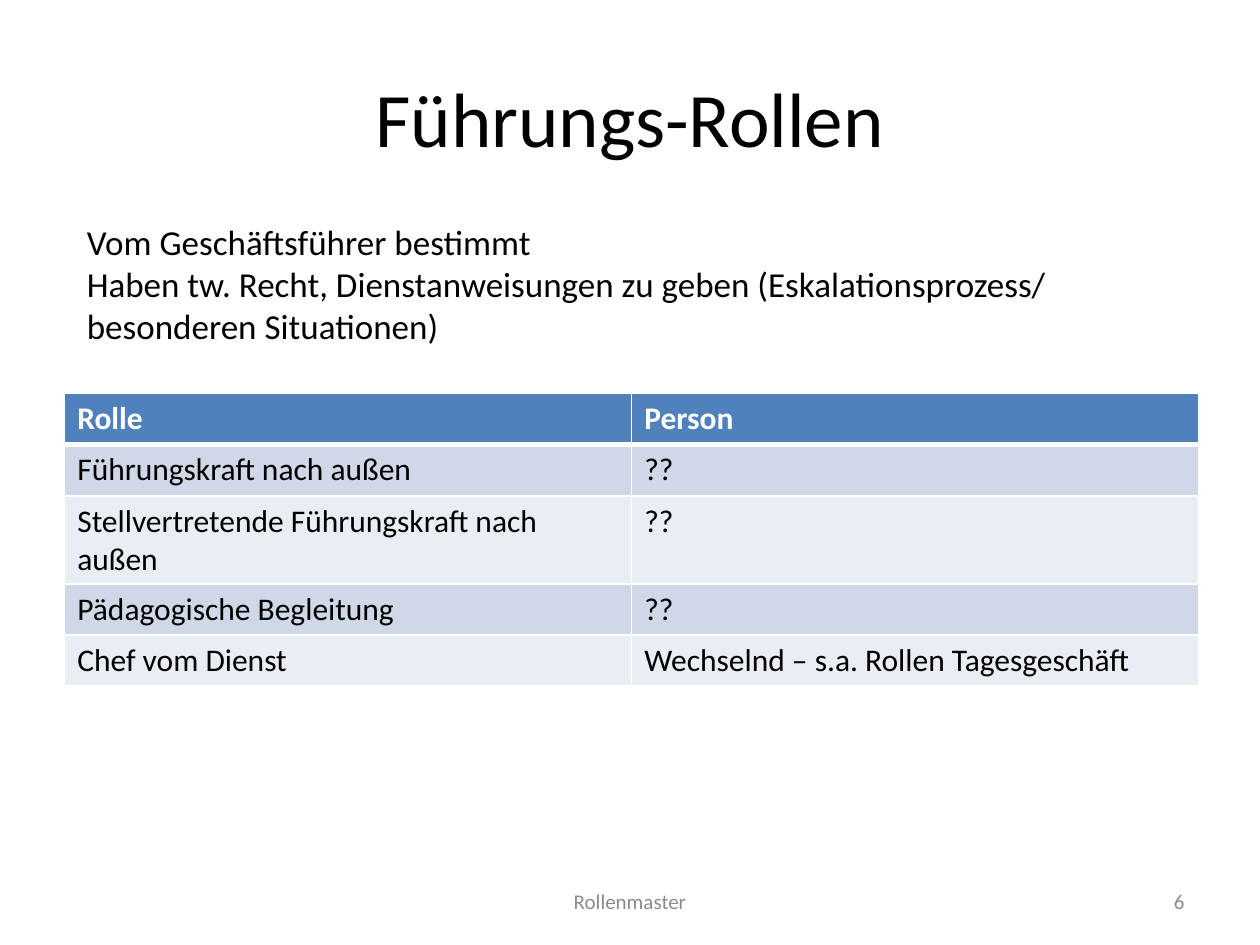
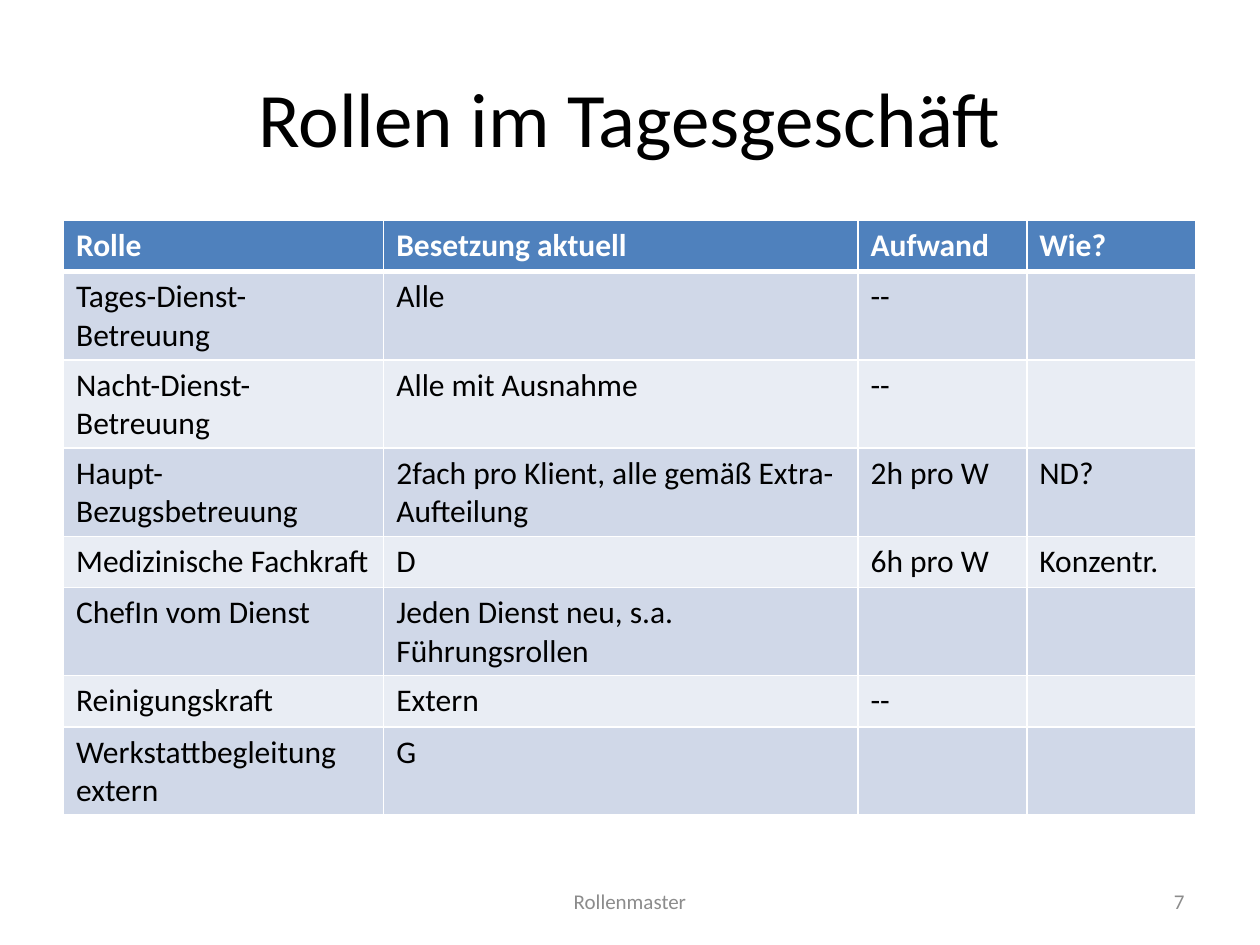
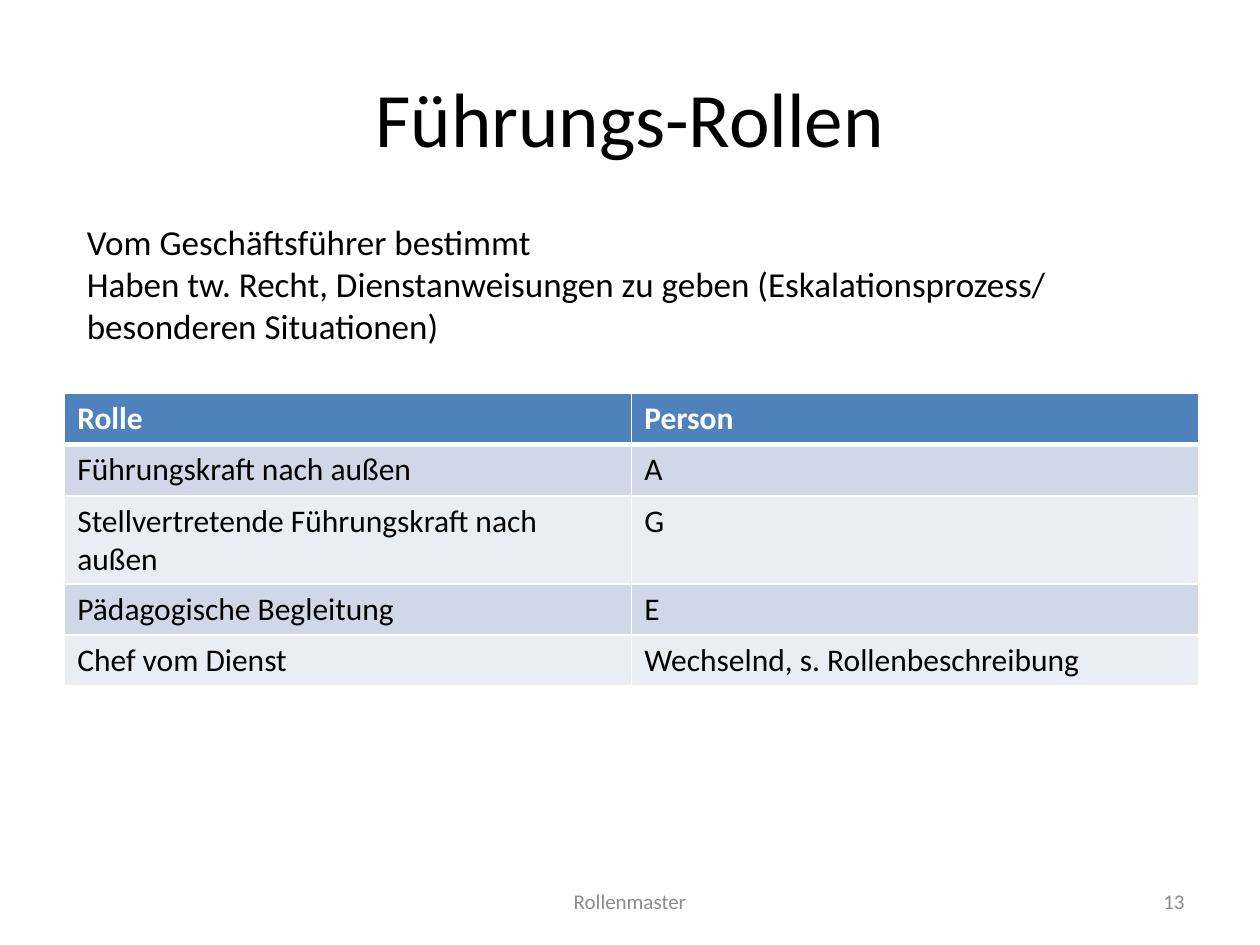
from dataclasses import dataclass

from lxml.etree import SubElement
from pptx import Presentation
from pptx.dml.color import RGBColor as Rgb
from pptx.enum.text import MSO_ANCHOR as Anchor, PP_ALIGN as Align
from pptx.oxml.ns import qn
from pptx.slide import Slide
from pptx.text.text import TextFrame
from pptx.util import Pt


@dataclass(frozen=True)
class Theme:
    font: str = "Calibri"
    black: str = "000000"
    white: str = "FFFFFF"
    gray: str = "8C8C8C"
    head: str = "4F81BD"
    bands: tuple[str, str] = ("D0D8E8", "E9EDF4")
    title: int = 44
    lead: int = 20
    body: int = 18
    small: int = 12
    thin: int = 1
    thick: int = 3


@dataclass(frozen=True)
class Box:
    left: float
    top: float
    width: float
    height: float


@dataclass(frozen=True)
class Grid:
    left: float
    top: float
    cols: tuple[float, ...]
    rows: tuple[tuple[str, ...], ...]


@dataclass(frozen=True)
class Page:
    title: str
    number: int
    grid: Grid
    lead: str = ""


THEME = Theme()
TITLE = Box(36, 21.6, 648, 90)
LEAD = Box(42.5, 122.4, 635, 80)
FOOTER = Box(246, 500.5, 228, 28.75)
NUMBER = Box(516, 500.5, 168, 28.75)
ROW = 29.2

LEAD_TEXT = (
    "Vom Geschäftsführer bestimmt\n"
    "Haben tw. Recht, Dienstanweisungen zu geben "
    "(Eskalationsprozess/ besonderen Situationen)"
)


def lead_page(number: int, people: tuple[str, ...]) -> Page:
    roles = (
        "Rolle",
        "Führungskraft nach außen",
        "Stellvertretende Führungskraft nach außen",
        "Pädagogische Begleitung",
        "Chef vom Dienst",
    )
    rows = tuple(zip(roles, ("Person", *people)))
    grid = Grid(37, 224.9, (324, 324), rows)
    return Page("Führungs-Rollen", number, grid, LEAD_TEXT)


DAILY = Grid(36.3, 126, (183, 271, 96.5, 96.5), (
    ("Rolle", "Besetzung aktuell", "Aufwand", "Wie?"),
    ("Tages-Dienst-Betreuung", "Alle", "--", ""),
    ("Nacht-Dienst-Betreuung", "Alle mit Ausnahme", "--", ""),
    ("Haupt- Bezugsbetreuung",
     "2fach pro Klient, alle gemäß Extra-Aufteilung", "2h pro W", "ND?"),
    ("Medizinische Fachkraft", "D", "6h pro W", "Konzentr."),
    ("ChefIn vom Dienst", "Jeden Dienst neu, s.a. Führungsrollen", "", ""),
    ("Reinigungskraft", "Extern", "--", ""),
    ("Werkstattbegleitung extern", "G", "", ""),
))

PAGES = (
    lead_page(6, ("??", "??", "??", "Wechselnd – s.a. Rollen Tagesgeschäft")),
    Page("Rollen im Tagesgeschäft", 7, DAILY),
    lead_page(13, ("A", "G", "E", "Wechselnd, s. Rollenbeschreibung")),
)


def write(frame: TextFrame, text: str, *, size: int, color: str = THEME.black,
          bold: bool = False, align: Align = Align.LEFT) -> None:
    frame.text = text
    for para in frame.paragraphs:
        para.alignment = align
        font = para.font
        for run in para.runs:
            font = run.font
        font.name = THEME.font
        font.size = Pt(size)
        font.bold = bold
        font.color.rgb = Rgb.from_string(color)


def add_text(slide: Slide, box: Box, text: str, *, size: int,
             color: str = THEME.black, align: Align = Align.LEFT,
             anchor: Anchor = Anchor.MIDDLE) -> None:
    shape = slide.shapes.add_textbox(
        Pt(box.left), Pt(box.top), Pt(box.width), Pt(box.height))
    frame = shape.text_frame
    frame.word_wrap = True
    frame.vertical_anchor = anchor
    write(frame, text, size=size, color=color, align=align)


def add_edge(cell, side: str, width: int) -> None:
    props = cell._tc.get_or_add_tcPr()
    line = SubElement(props, qn(f"a:ln{side}"), w=str(Pt(width)))
    fill = SubElement(line, qn("a:solidFill"))
    SubElement(fill, qn("a:srgbClr"), val=THEME.white)


def add_grid(slide: Slide, grid: Grid) -> None:
    count = len(grid.rows)
    table = slide.shapes.add_table(
        count, len(grid.cols), Pt(grid.left), Pt(grid.top),
        Pt(sum(grid.cols)), Pt(ROW * count)).table
    for col, width in zip(table.columns, grid.cols):
        col.width = Pt(width)
    for r, texts in enumerate(grid.rows):
        table.rows[r].height = Pt(ROW)
        head = r == 0
        fill = THEME.head if head else THEME.bands[(r - 1) % 2]
        edges = {
            "L": THEME.thin,
            "R": THEME.thin,
            "T": THEME.thick if r == 1 else THEME.thin,
            "B": THEME.thick if head else THEME.thin,
        }
        for c, text in enumerate(texts):
            cell = table.cell(r, c)
            for side, width in edges.items():
                add_edge(cell, side, width)
            cell.fill.solid()
            cell.fill.fore_color.rgb = Rgb.from_string(fill)
            write(cell.text_frame, text, size=THEME.body, bold=head,
                  color=THEME.white if head else THEME.black)


def add_page(deck, page: Page) -> None:
    slide = deck.slides.add_slide(deck.slide_layouts[6])
    add_text(slide, TITLE, page.title, size=THEME.title, align=Align.CENTER)
    add_grid(slide, page.grid)
    if page.lead:
        add_text(slide, LEAD, page.lead, size=THEME.lead, anchor=Anchor.TOP)
    add_text(slide, NUMBER, str(page.number), size=THEME.small,
             color=THEME.gray, align=Align.RIGHT)
    add_text(slide, FOOTER, "Rollenmaster", size=THEME.small,
             color=THEME.gray, align=Align.CENTER)


def main() -> None:
    deck = Presentation()
    deck.slide_width = Pt(720)
    deck.slide_height = Pt(540)
    for page in PAGES:
        add_page(deck, page)
    deck.save("out.pptx")


if __name__ == "__main__":
    main()
